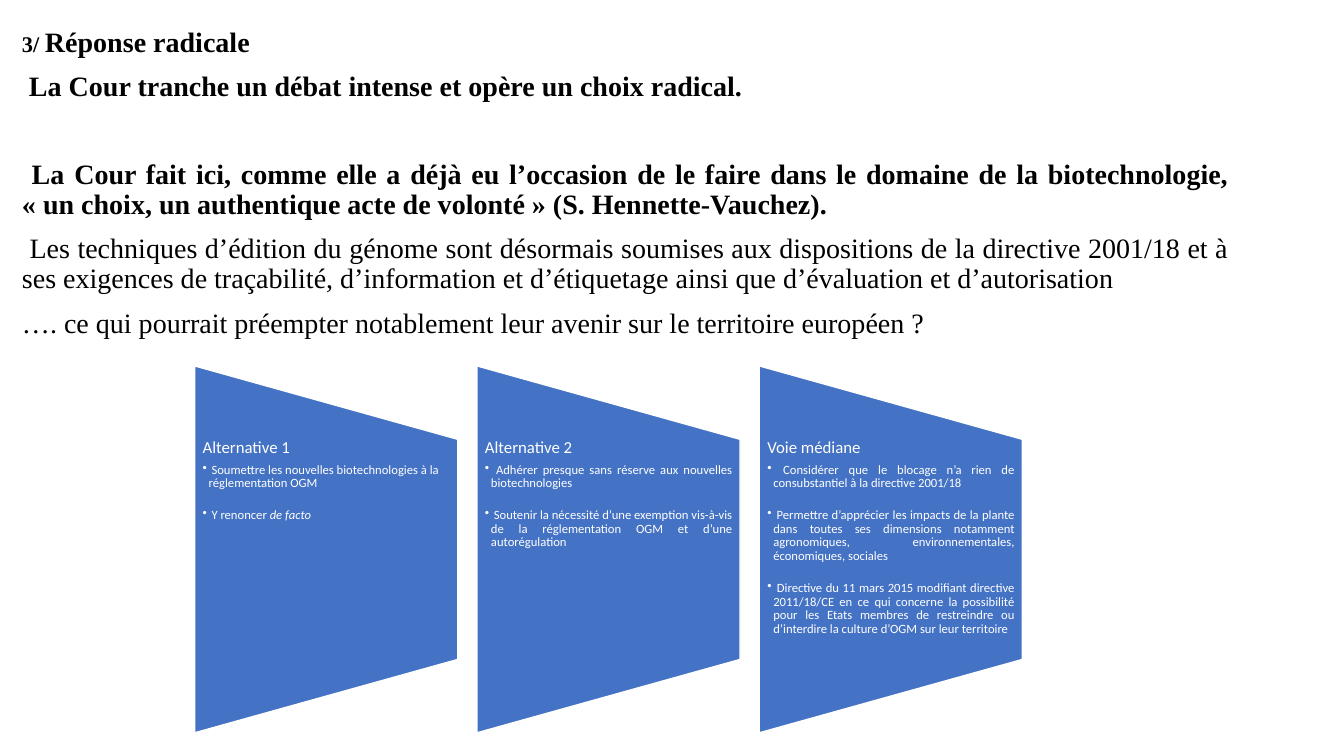
from lxml import etree
from pptx import Presentation
from pptx import util as u
from pptx.dml.color import RGBColor
from pptx.enum import shapes, text
from pptx.oxml import ns

BLACK = RGBColor(0, 0, 0)
WHITE = RGBColor(255, 255, 255)
BLUE = RGBColor(0x44, 0x72, 0xC4)
LEFT, FULL = text.PP_ALIGN.LEFT, text.PP_ALIGN.JUSTIFY

INTRO = [
    ("La Cour tranche un débat intense et opère un choix radical.", 10, True),
    ("La Cour fait ici, comme elle a déjà eu l’occasion de le faire dans le domaine "
     "de la biotechnologie, «\u00a0un choix, un authentique acte de volonté » "
     "(S. Hennette-Vauchez).", 41, True),
    ("Les techniques d’édition du génome sont désormais soumises aux dispositions de la "
     "directive 2001/18 et à ses exigences de traçabilité, d’information et d’étiquetage "
     "ainsi que d’évaluation et d’autorisation", 10, False),
]
CLOSE = "…. ce qui pourrait préempter notablement leur avenir sur le territoire européen ?"

PANELS = [
    ("Alternative 1", LEFT, [
        ("Soumettre les nouvelles biotechnologies à la réglementation OGM", ""),
        ("Y renoncer ", "de facto")]),
    ("Alternative 2", FULL, [
        ("Adhérer presque sans réserve aux nouvelles biotechnologies", ""),
        ("Soutenir la nécessité d’une exemption vis-à-vis de la réglementation OGM "
         "et d’une autorégulation", "")]),
    ("Voie médiane", FULL, [
        ("Considérer que le blocage n’a rien de consubstantiel à la directive 2001/18", ""),
        ("Permettre d’apprécier les impacts de la plante dans toutes ses dimensions "
         "notamment agronomiques, environnementales, économiques, sociales", ""),
        ("Directive du 11 mars 2015 modifiant directive 2011/18/CE en ce qui concerne la "
         "possibilité pour les Etats membres de restreindre ou d’interdire la culture "
         "d’OGM sur leur territoire", "")]),
]


def write(para, words, size=20, font="Times New Roman", color=BLACK,
          bold=False, italic=False):
    run = para.add_run()
    run.text = words
    face = run.font
    face.size, face.name, face.bold, face.italic = u.Pt(size), font, bold, italic
    face.color.rgb = color


class Page:
    small = {"size": 9, "font": "Calibri", "color": WHITE}
    head = {**small, "size": 12}

    def __init__(self, deck):
        self.slide = deck.slides.add_slide(deck.slide_layouts[6])

    def box(self, x, y, w, h, side=0.1, top=0.05):
        frame = self.slide.shapes.add_textbox(*map(u.Inches, (x, y, w, h))).text_frame
        frame.word_wrap = True
        frame.margin_left = frame.margin_right = u.Inches(side)
        frame.margin_top = frame.margin_bottom = u.Inches(top)
        return frame

    def para(self, frame, align=FULL, before=0, after=0):
        first = frame.paragraphs[0]
        para = frame.add_paragraph() if first.runs else first
        para.alignment, para.line_spacing = align, 0.9
        para.space_before, para.space_after = u.Pt(before), u.Pt(after)
        return para

    def bullet(self, frame, align):
        para = self.para(frame, align, after=13)
        para.level = 1
        props = para._p.get_or_add_pPr()
        props.set("marL", str(u.Inches(0.06)))
        props.set("indent", str(u.Inches(-0.06)))
        etree.SubElement(props, ns.qn("a:buChar")).set("char", "•")
        return para

    def panel(self, x, title, align, points):
        w, h, mid = 2.61, 3.64, 5.45
        spot = map(u.Inches, (x + (w - h) / 2, mid - w / 2, h, w))
        shape = self.slide.shapes.add_shape(
            shapes.MSO_SHAPE.FLOWCHART_MANUAL_OPERATION, *spot)
        shape.rotation = 270
        shape.shadow.inherit = False
        shape.fill.solid()
        shape.fill.fore_color.rgb = BLUE
        shape.line.color.rgb = WHITE
        shape.line.width = u.Pt(1)
        frame = self.box(x, 4.36, w, 2.18, side=0.08, top=0)
        write(self.para(frame, align, after=4), title, **self.head)
        for plain, slant in points:
            para = self.bullet(frame, align)
            write(para, " " + plain, **self.small)
            if slant:
                write(para, slant, italic=True, **self.small)


def main():
    deck = Presentation()
    deck.slide_width, deck.slide_height = u.Inches(13.33), u.Inches(7.5)
    page = Page(deck)
    body = page.box(0.12, 0.23, 12.17, 7.27)
    lead = page.para(body)
    write(lead, "3/ ", size=16, bold=True)
    write(lead, "Réponse radicale", bold=True)
    for words, gap, bold in INTRO:
        write(page.para(body, before=gap), " " + words, bold=bold)
    write(page.para(body, before=10), CLOSE)
    for i, panel in enumerate(PANELS):
        page.panel(1.93 + 2.8 * i, *panel)
    deck.save("out.pptx")


if __name__ == "__main__":
    main()
